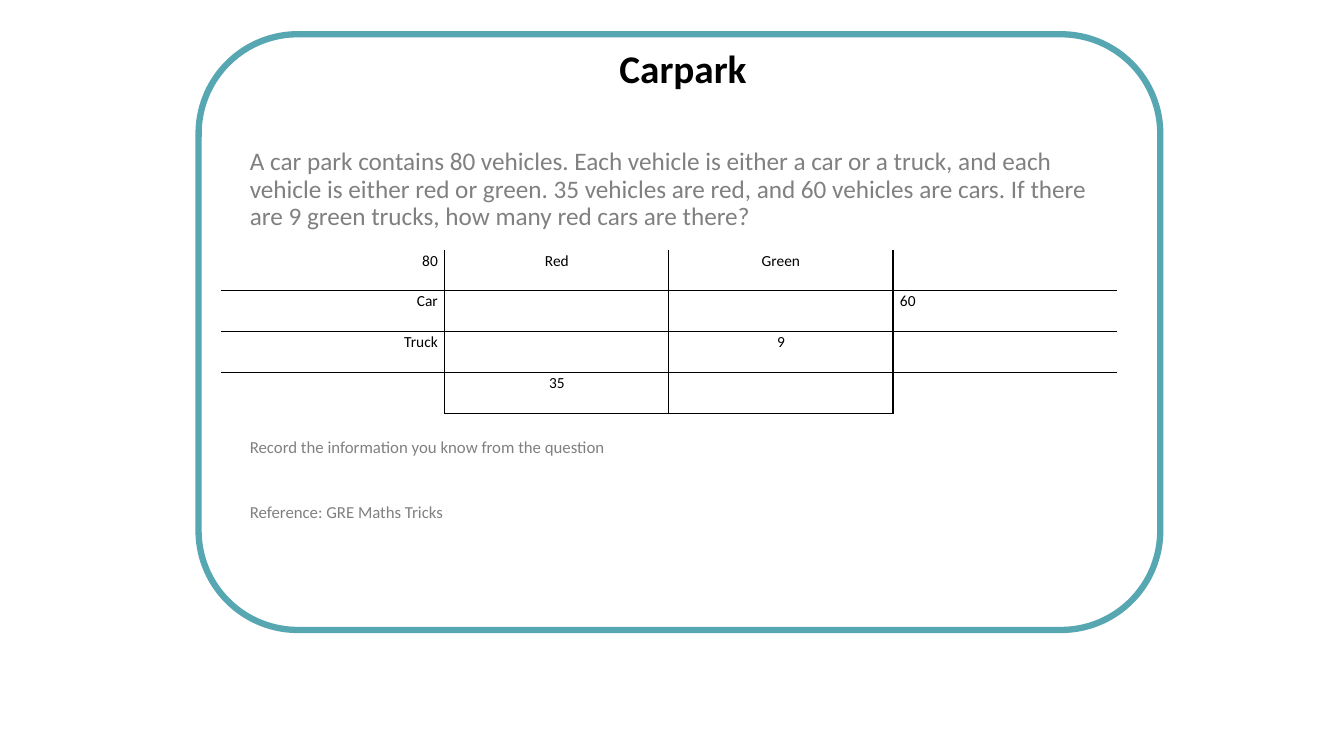
from dataclasses import dataclass

from lxml import etree
from pptx import Presentation
from pptx.dml.color import RGBColor
from pptx.enum.shapes import MSO_SHAPE
from pptx.enum.text import MSO_ANCHOR, PP_ALIGN
from pptx.oxml.ns import qn
from pptx.util import Inches, Pt

ROUNDED = MSO_SHAPE.ROUNDED_RECTANGLE
TOP = MSO_ANCHOR.TOP
LEFT, CENTER, RIGHT = PP_ALIGN.LEFT, PP_ALIGN.CENTER, PP_ALIGN.RIGHT
SLIDE_W, SLIDE_H = Inches(13.33), Inches(7.5)


@dataclass(frozen=True)
class Theme:
    font: str = "Calibri"
    frame: str = "57A7B3"
    ink: str = "000000"
    muted: str = "808080"
    title: float = 28
    question: float = 18
    note: float = 12
    cell: float = 11
    frame_line: float = 4.5
    grid_line: float = 1


@dataclass(frozen=True)
class Box:
    left: float
    top: float
    width: float
    height: float

    def emu(self) -> tuple[int, int, int, int]:
        return (
            int(SLIDE_W * self.left / 100),
            int(SLIDE_H * self.top / 100),
            int(SLIDE_W * self.width / 100),
            int(SLIDE_H * self.height / 100),
        )


@dataclass(frozen=True)
class Para:
    text: str
    size: float
    before: float = 0


THEME = Theme()
FRAME = Box(14.78, 4.53, 71.55, 78.8)
TITLE = Box(16.43, 5.2, 68.78, 18.87)
BODY = Box(17.85, 19.07, 64.2, 57.2)
TABLE = Box(16.43, 33.07, 66.68, 21.6)

PARAS = [
    Para(
        "A car park contains 80 vehicles. Each vehicle is either a car or a truck, "
        "and each vehicle is either red or green. 35 vehicles are red, and 60 vehicles "
        "are cars. If there are 9 green trucks, how many red cars are there?",
        THEME.question,
    ),
    Para("Record the information you know from the question", THEME.note, 149),
    Para("Reference: GRE Maths Tricks", THEME.note, 33),
]
ROWS = [
    ["80", "Red", "Green", ""],
    ["Car", "", "", "60"],
    ["Truck", "", "9", ""],
    ["", "35", "", ""],
]
ALIGNS = [RIGHT, CENTER, CENTER, LEFT]


def write(p, text: str, *, size: float, color: str, bold: bool = False,
          align=LEFT, spacing: float = 1.0, before: float = 0) -> None:
    p.alignment = align
    p.line_spacing = spacing
    p.space_before = Pt(before)
    if text:
        r = p.add_run()
        r.text = text
        r.font.name = THEME.font
        r.font.size = Pt(size)
        r.font.bold = bold
        r.font.color.rgb = RGBColor.from_string(color)


def add_text_frame(slide, box: Box):
    tf = slide.shapes.add_textbox(*box.emu()).text_frame
    tf.word_wrap = True
    tf.vertical_anchor = TOP
    return tf


def add_frame(slide) -> None:
    sp = slide.shapes.add_shape(ROUNDED, *FRAME.emu())
    sp.shadow.inherit = False
    sp.fill.background()
    sp.line.color.rgb = RGBColor.from_string(THEME.frame)
    sp.line.width = Pt(THEME.frame_line)


def set_border(cell, side: str, visible: bool) -> None:
    ln = etree.SubElement(cell._tc.get_or_add_tcPr(), qn(f"a:ln{side}"))
    if visible:
        ln.set("w", str(Pt(THEME.grid_line)))
        fill = etree.SubElement(ln, qn("a:solidFill"))
        etree.SubElement(fill, qn("a:srgbClr")).set("val", THEME.ink)
    else:
        etree.SubElement(ln, qn("a:noFill"))


def add_grid(slide) -> None:
    n_rows, n_cols = len(ROWS), len(ALIGNS)
    last_row, last_col = n_rows - 1, n_cols - 1
    table = slide.shapes.add_table(n_rows, n_cols, *TABLE.emu()).table
    table.first_row = table.horz_banding = False
    for i, row in enumerate(ROWS):
        for j, text in enumerate(row):
            cell = table.cell(i, j)
            cell.margin_left = cell.margin_right = Inches(0.07)
            cell.margin_top = cell.margin_bottom = 0
            borders = {
                "L": j > 0,
                "R": j < last_col,
                "T": i > 0,
                "B": i < last_row or 0 < j < last_col,
            }
            for side, visible in borders.items():
                set_border(cell, side, visible)
            cell.fill.background()
            write(cell.text_frame.paragraphs[0], text, size=THEME.cell,
                  color=THEME.ink, align=ALIGNS[j], spacing=1.07)


def main() -> None:
    prs = Presentation()
    prs.slide_width, prs.slide_height = SLIDE_W, SLIDE_H
    slide = prs.slides.add_slide(prs.slide_layouts[6])
    add_frame(slide)
    tf = add_text_frame(slide, TITLE)
    write(tf.paragraphs[0], "Carpark", size=THEME.title, color=THEME.ink,
          bold=True, align=CENTER)
    tf = add_text_frame(slide, BODY)
    for i, para in enumerate(PARAS):
        p = tf.add_paragraph() if i else tf.paragraphs[0]
        write(p, para.text, size=para.size, color=THEME.muted,
              spacing=0.9, before=para.before)
    add_grid(slide)
    prs.save("out.pptx")


if __name__ == "__main__":
    main()
